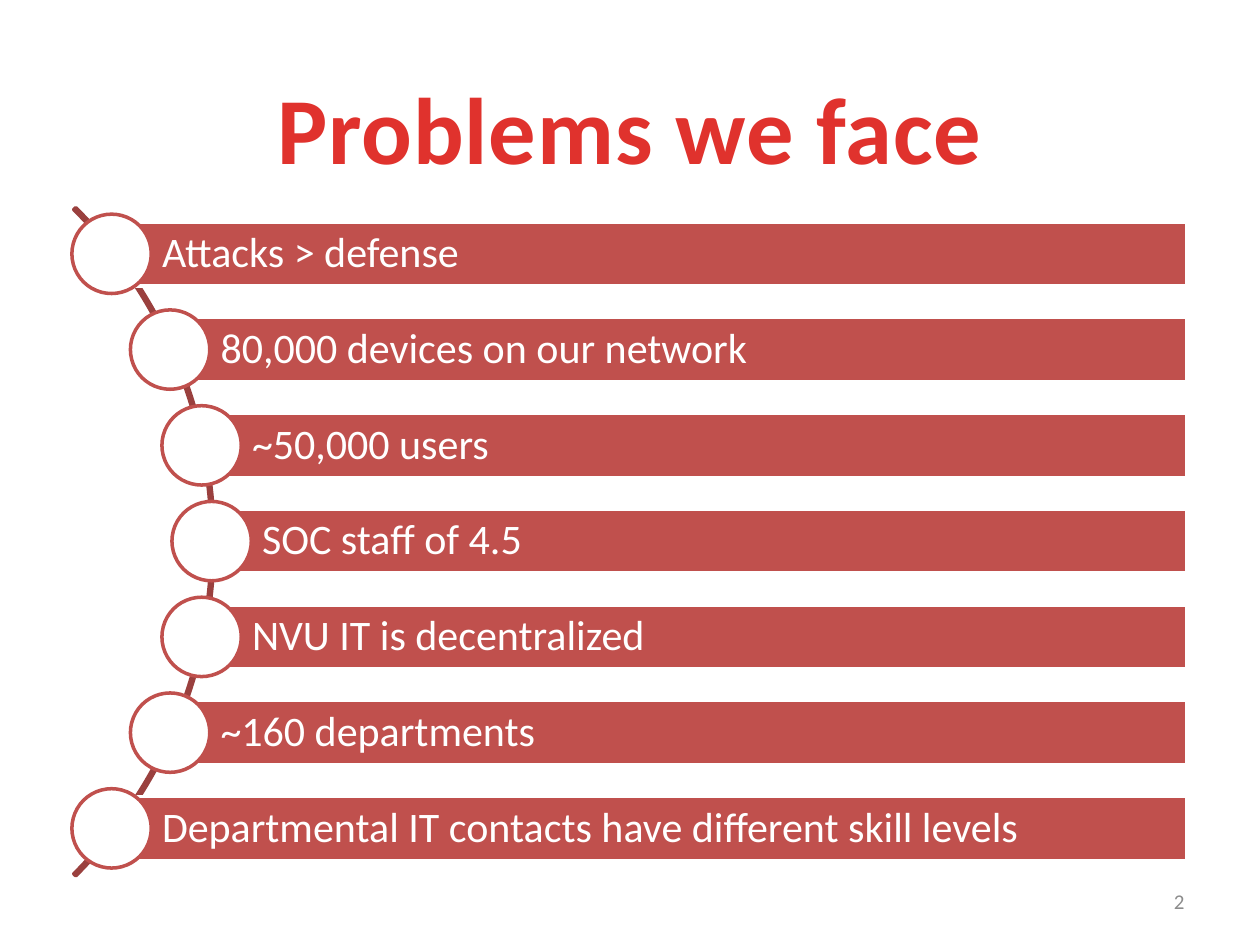
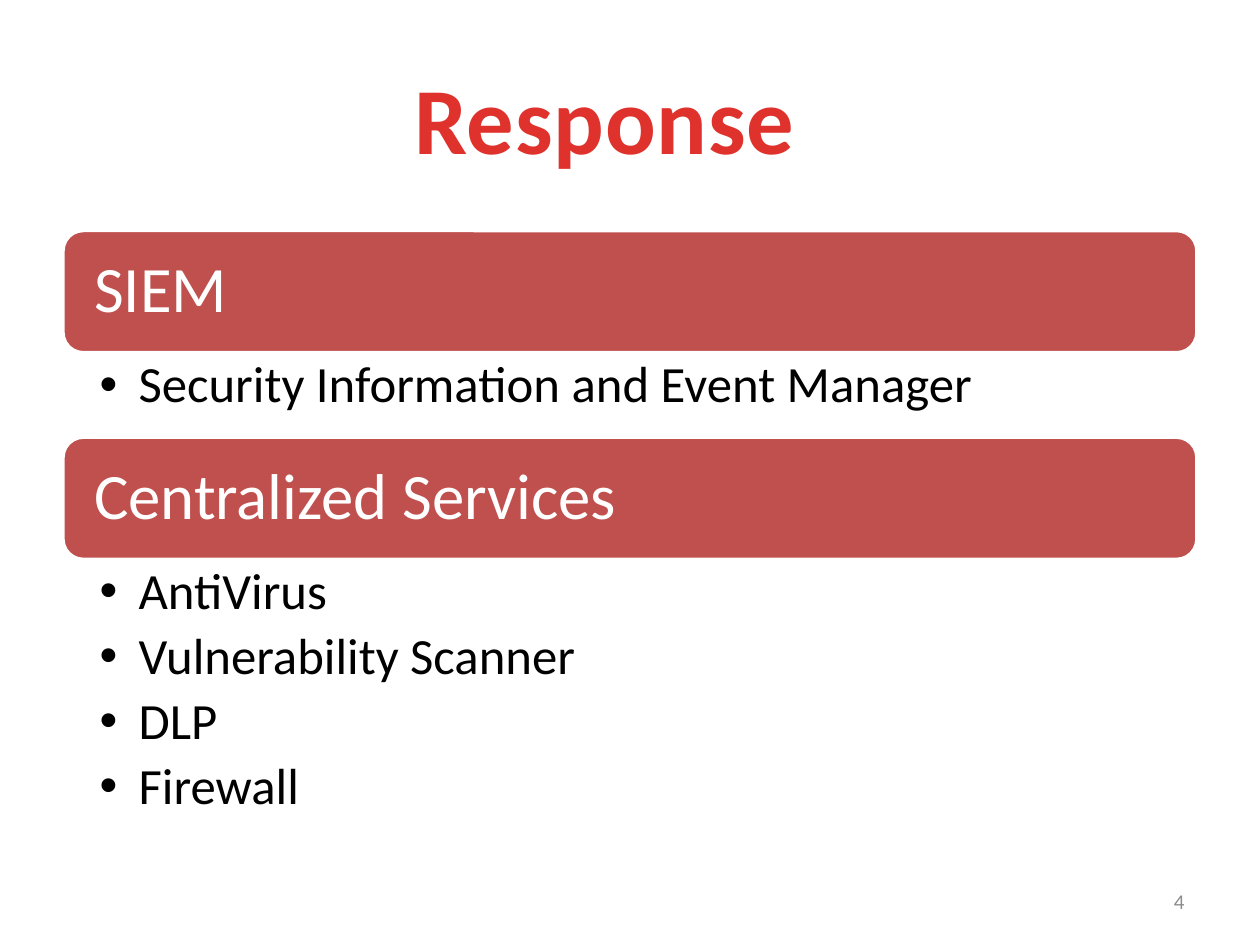
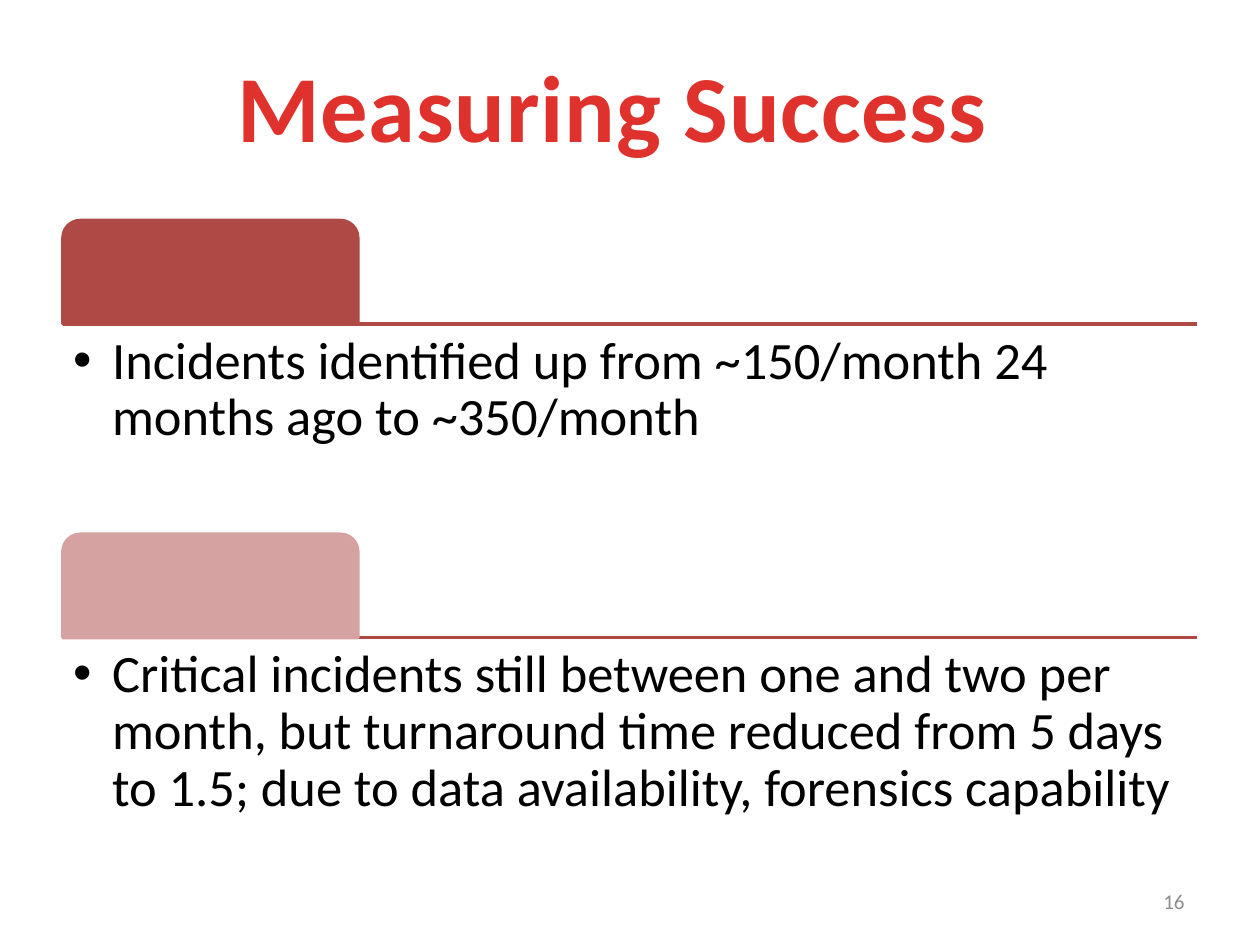
from dataclasses import dataclass
from math import sqrt

from pptx import Presentation
from pptx.dml.color import RGBColor
from pptx.enum.shapes import MSO_CONNECTOR, MSO_SHAPE
from pptx.enum.text import MSO_ANCHOR, MSO_AUTO_SIZE, PP_ALIGN
from pptx.oxml.ns import qn
from pptx.util import Inches, Pt

PROBLEMS = {
    "title": ("Problems we face", 2.07, 0.5, 5.86),
    "number": "2",
    "items": [
        "Attacks > defense",
        "80,000 devices on our network",
        "~50,000 users",
        "SOC staff of 4.5",
        "NVU IT is decentralized",
        "~160 departments",
        "Departmental IT contacts have different skill levels",
    ],
}
RESPONSE = {
    "title": ("Response", 3.17, 0.42, 3.26),
    "number": "4",
    "sections": [
        ("SIEM", ["Security Information and Event Manager"], 0.67),
        ("Centralized Services",
         ["AntiVirus", "Vulnerability Scanner", "DLP", "Firewall"], 2.18),
    ],
}
SUCCESS = {
    "title": ("Measuring Success", 1.75, 0.33, 6.22),
    "number": "16",
    "findings": [
        ("Incidents identified up from ~150/month 24 months ago to ~350/month",
         "AE4946"),
        ("Critical incidents still between one and two per month, but turnaround "
         "time reduced from 5 days to 1.5; due to data availability, forensics "
         "capability", "D6A2A1"),
    ],
}


@dataclass(frozen=True)
class Theme:
    font: str = "Calibri"
    title_start: str = "E0322D"
    title_end: str = "A2201C"
    red: str = "C0504D"
    arc: str = "9A403E"
    rule: str = "AE4946"
    white: str = "FFFFFF"
    black: str = "000000"
    gray: str = "8C8C8C"
    title_size: int = 54
    heading_size: int = 37
    finding_size: int = 30
    list_size: int = 29
    bar_size: int = 24
    number_size: int = 12
    line_width: int = 2
    left: float = 0.5
    width: float = 9
    indent: float = 0.31


THEME = Theme()


def color(value):
    return RGBColor.from_string(value)


def add_span(para, text, size, ink):
    span = para.add_run()
    span.text = text
    span.font.name = THEME.font
    span.font.size = Pt(size)
    span.font.color.rgb = color(ink)
    return span


def place(shape, left, top, width, height):
    shape.left, shape.top = Inches(left), Inches(top)
    shape.width, shape.height = Inches(width), Inches(height)


def set_insets(frame, left, top, right, bottom):
    frame.margin_left, frame.margin_top = Inches(left), Inches(top)
    frame.margin_right, frame.margin_bottom = Inches(right), Inches(bottom)


def add_box(page, kind, left, top, width, height, fill, line):
    box = page.shapes.add_shape(
        kind, Inches(left), Inches(top), Inches(width), Inches(height))
    box.shadow.inherit = False
    if fill:
        box.fill.solid()
        box.fill.fore_color.rgb = color(fill)
    else:
        box.fill.background()
    box.line.color.rgb = color(line)
    box.line.width = Pt(THEME.line_width)
    return box


def write_label(box, text, size, insets):
    frame = box.text_frame
    frame.word_wrap = True
    frame.vertical_anchor = MSO_ANCHOR.MIDDLE
    set_insets(frame, *insets)
    para = frame.paragraphs[0]
    para.alignment = PP_ALIGN.LEFT
    para.line_spacing = 0.9
    add_span(para, text, size, THEME.white)


def fill_list(body, items, area, size, insets, gap):
    place(body, *area)
    frame = body.text_frame
    frame.auto_size = MSO_AUTO_SIZE.NONE
    frame.word_wrap = True
    set_insets(frame, *insets)
    for index, item in enumerate(items):
        para = frame.add_paragraph() if index else frame.paragraphs[0]
        para.line_spacing = 0.9
        para.space_before = Pt(0)
        para.space_after = Pt(size * gap)
        properties = para._p.get_or_add_pPr()
        properties.set("marL", str(Inches(THEME.indent)))
        properties.set("indent", str(-Inches(THEME.indent)))
        add_span(para, item, size, THEME.black)


def add_rule(page, top):
    rule = page.shapes.add_connector(
        MSO_CONNECTOR.STRAIGHT, Inches(THEME.left), Inches(top),
        Inches(THEME.left + THEME.width), Inches(top))
    rule.line.color.rgb = color(THEME.rule)
    rule.line.width = Pt(THEME.line_width)
    properties = rule._element.spPr
    properties.append(properties.makeelement(qn("a:effectLst"), {}))


def add_page(deck, layout, content):
    page = deck.slides.add_slide(deck.slide_layouts.get_by_name(layout))
    text, left, top, width = content["title"]
    title = page.shapes.title
    place(title, left, top, width, 1.01)
    frame = title.text_frame
    frame.word_wrap = False
    frame.auto_size = MSO_AUTO_SIZE.SHAPE_TO_FIT_TEXT
    para = frame.paragraphs[0]
    para.alignment = PP_ALIGN.CENTER
    span = add_span(para, text, THEME.title_size, THEME.title_start)
    span.font.bold = True
    span.font.fill.gradient()
    span.font.fill.gradient_angle = 270
    stops = [(0.25, THEME.title_start), (1, THEME.title_end)]
    for stop, (position, ink) in zip(span.font.fill.gradient_stops, stops):
        stop.position = position
        stop.color.rgb = color(ink)
    span._r.get_or_add_rPr().set("spc", "50")

    number = page.shapes.add_textbox(
        Inches(7.17), Inches(6.95), Inches(2.33), Inches(0.4))
    number.text_frame.word_wrap = True
    number.text_frame.vertical_anchor = MSO_ANCHOR.MIDDLE
    para = number.text_frame.paragraphs[0]
    para.alignment = PP_ALIGN.RIGHT
    add_span(para, content["number"], THEME.number_size, THEME.gray)
    return page


def build_problems(deck):
    page = add_page(deck, "Title Only", PROBLEMS)
    arc = add_box(page, MSO_SHAPE.BLOCK_ARC, -5.8, 0.55, 7.5, 7.5, None, THEME.arc)
    for index, value in enumerate((189, 27, 0.003)):
        arc.adjustments[index] = value

    items = PROBLEMS["items"]
    middle, pitch, bar_height, dot, right = 4.295, 0.76, 0.51, 0.63, 9.42
    curve_center, curve_radius = -1.99, 3.67
    for index, item in enumerate(items):
        offset = (index - (len(items) - 1) / 2) * pitch
        x = curve_center + sqrt(curve_radius ** 2 - offset ** 2)
        y = middle + offset
        bar = add_box(page, MSO_SHAPE.RECTANGLE, x, y - bar_height / 2,
                      right - x, bar_height, THEME.red, THEME.white)
        write_label(bar, item, THEME.bar_size, (0.4, 0.07, 0.07, 0.07))
        add_box(page, MSO_SHAPE.OVAL, x - dot / 2, y - dot / 2, dot, dot,
                THEME.white, THEME.red)


def build_response(deck):
    page = add_page(deck, "Two Content", RESPONSE)
    bodies = list(page.placeholders)[1:]
    top, heading_height = 1.83, 0.97
    for body, (heading, items, list_height) in zip(bodies, RESPONSE["sections"]):
        band = add_box(page, MSO_SHAPE.ROUNDED_RECTANGLE, THEME.left, top,
                       THEME.width, heading_height, THEME.red, THEME.white)
        write_label(band, heading, THEME.heading_size, (0.2, 0.2, 0.2, 0.2))
        top += heading_height
        fill_list(body, items, (THEME.left, top, THEME.width, list_height),
                  THEME.list_size, (0.29, 0.05, 0.29, 0.05), 0.2)
        top += list_height


def build_success(deck):
    page = add_page(deck, "Two Content", SUCCESS)
    bodies = list(page.placeholders)[1:]
    first_rule, pitch, tab_width, tab_height = 2.57, 2.49, 2.34, 0.82
    for index, (body, (finding, fill)) in enumerate(zip(bodies, SUCCESS["findings"])):
        top = first_rule + index * pitch
        add_rule(page, top)
        add_box(page, MSO_SHAPE.ROUND_2_SAME_RECTANGLE, THEME.left,
                top - tab_height, tab_width, tab_height, fill, fill)
        fill_list(body, [finding], (THEME.left, top, THEME.width, 1.64),
                  THEME.finding_size, (0.08, 0.08, 0.08, 0.08), 0.15)


def main():
    deck = Presentation()
    deck.slide_width, deck.slide_height = Inches(10), Inches(7.5)
    build_problems(deck)
    build_response(deck)
    build_success(deck)
    deck.save("out.pptx")


if __name__ == "__main__":
    main()
